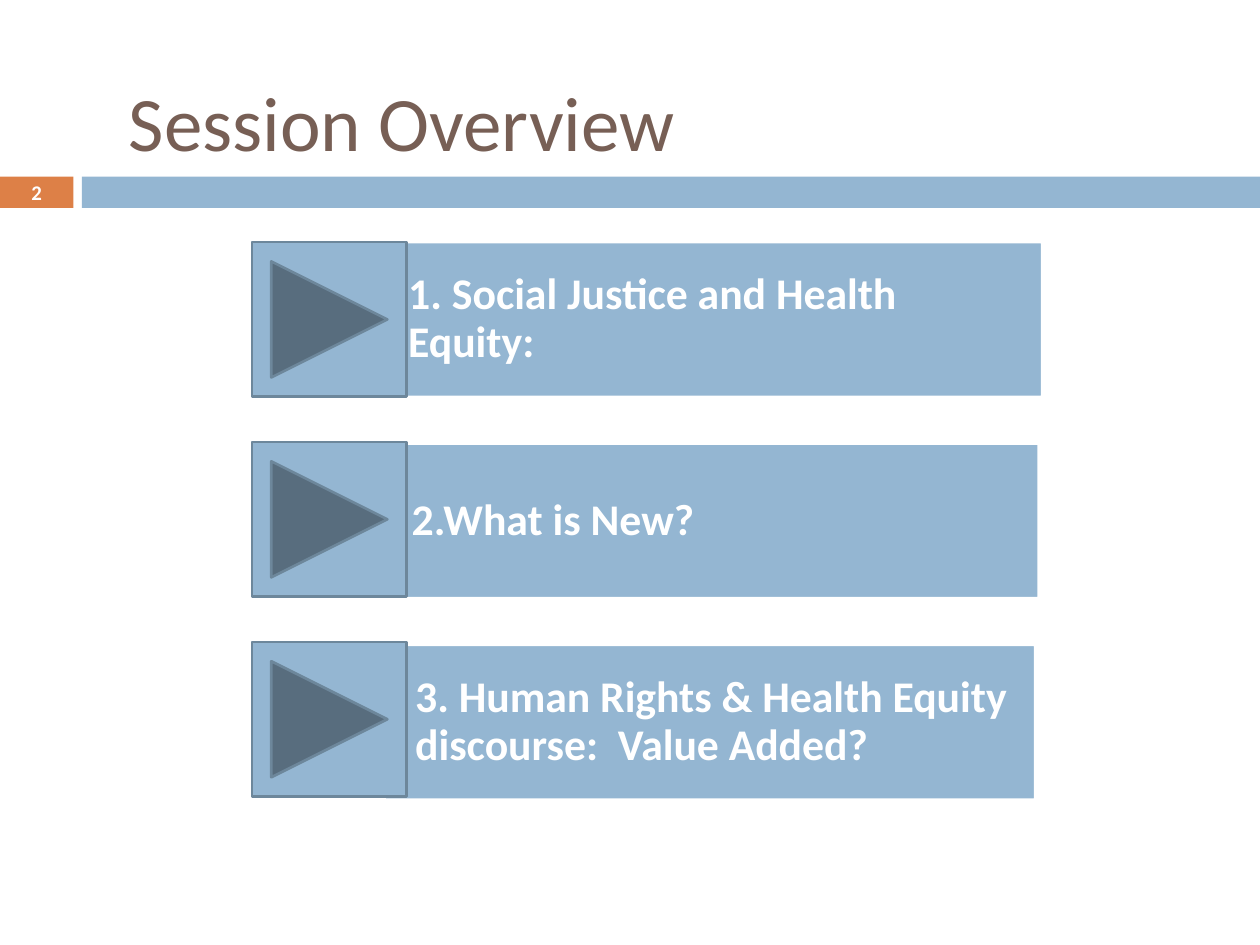
from dataclasses import dataclass

from pptx import Presentation
from pptx.dml.color import RGBColor
from pptx.enum.shapes import MSO_SHAPE
from pptx.enum.text import MSO_ANCHOR, MSO_AUTO_SIZE, PP_ALIGN
from pptx.util import Cm, Pt


@dataclass(frozen=True)
class Theme:
    font: str = "Calibri"
    blue: str = "94B6D2"
    orange: str = "DD8047"
    slate: str = "6D879B"
    brown: str = "775F55"
    white: str = "FFFFFF"
    title_size: float = 44
    topic_size: float = 25
    number_size: float = 11.9
    outline: float = 1.5


class SlideBuilder:
    """Draws styled elements on one slide; lengths are in centimetres."""

    def __init__(self, slide, theme):
        self.slide = slide
        self.theme = theme

    def shape(self, kind, box, fill, line=None):
        shape = self.slide.shapes.add_shape(kind, *map(Cm, box))
        shape.shadow.inherit = False
        shape.fill.solid()
        shape.fill.fore_color.rgb = RGBColor.from_string(fill)
        if line:
            shape.line.color.rgb = RGBColor.from_string(line)
            shape.line.width = Pt(self.theme.outline)
        else:
            shape.line.fill.background()
        return shape

    def set_text(self, frame, text, size, color, bold=False, align=PP_ALIGN.LEFT):
        frame.text = text
        frame.word_wrap = True
        frame.auto_size = MSO_AUTO_SIZE.NONE
        frame.vertical_anchor = MSO_ANCHOR.MIDDLE
        paragraph = frame.paragraphs[0]
        paragraph.alignment = align
        font = paragraph.runs[0].font
        font.name, font.size, font.bold = self.theme.font, Pt(size), bold
        font.color.rgb = RGBColor.from_string(color)

    def title(self, text, box):
        title = self.slide.shapes.title
        title.left, title.top, title.width, title.height = map(Cm, box)
        self.set_text(title.text_frame, text, self.theme.title_size, self.theme.brown)

    def text(self, text, box, size, align=PP_ALIGN.LEFT):
        frame = self.slide.shapes.add_textbox(*map(Cm, box)).text_frame
        self.set_text(frame, text, size, self.theme.white, True, align)
        return frame

    def topic(self, text, plate_box, button_box):
        theme = self.theme
        # Pentagon pointing left, its tip behind the button
        plate = self.shape(MSO_SHAPE.PENTAGON, plate_box, theme.blue, theme.white)
        plate.rotation = 180
        # Label shares the plate's right edge
        left, top, width, height = plate_box
        inset = 0.79
        label = self.text(text, (left + inset, top, width - inset, height),
                          theme.topic_size)
        label.margin_left, label.margin_right = Cm(1.37), Cm(0.48)
        label.paragraphs[0].line_spacing = 0.9
        self.shape(MSO_SHAPE.ACTION_BUTTON_FORWARD_OR_NEXT, button_box,
                   theme.blue, theme.slate)


TOPICS = (
    "1. Social Justice and Health Equity:",
    "2.What is New?",
    "3. Human Rights & Health Equity discourse:  Value Added?",
)


def main():
    theme = Theme()
    presentation = Presentation()
    presentation.slide_width, presentation.slide_height = Cm(25.4), Cm(19.05)
    layout = presentation.slide_layouts.get_by_name("Title Only")
    builder = SlideBuilder(presentation.slides.add_slide(layout), theme)

    # Header band and slide number
    band_top, band_height = 3.56, 0.63
    number_box = (0, band_top, 1.48, band_height)
    builder.shape(MSO_SHAPE.RECTANGLE, number_box, theme.orange)
    builder.shape(MSO_SHAPE.RECTANGLE, (1.65, band_top, 23.75, band_height), theme.blue)
    builder.title("Session Overview", (2.34, 0.84, 22.43, 3.18))
    builder.text("2", number_box, theme.number_size, PP_ALIGN.CENTER)

    # Topics: each plate is a little narrower than the one above
    first_top, side = 4.88, 3.12
    for index, topic in enumerate(TOPICS):
        narrowing = 0.07 * index
        plate_box = (6.07 + narrowing, first_top + 4.06 * index,
                     14.94 - 2 * narrowing, side)
        button_box = (5.08, first_top + 4.03 * index, side, side)
        builder.topic(topic, plate_box, button_box)

    presentation.save("out.pptx")


if __name__ == "__main__":
    main()
